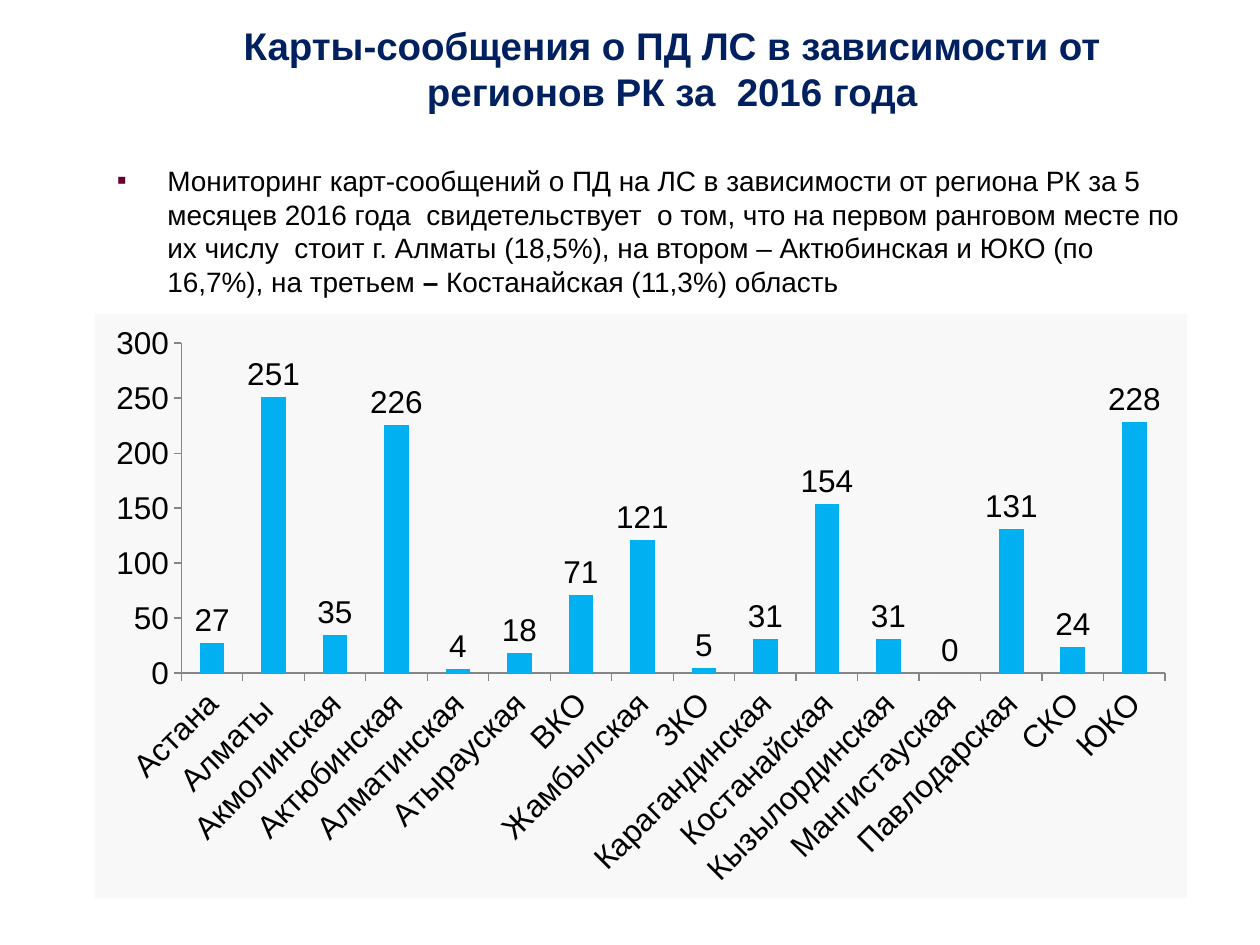
import pptx
import pptx.chart.data
import pptx.dml.color
import pptx.enum.chart
import pptx.enum.text
import pptx.oxml
import pptx.oxml.ns
import pptx.util
from lxml import etree
from pptx.util import Inches

FONT = "Arial"
COLORS = {
    "title": "002060",
    "text": "000000",
    "bullet": "660033",
    "bar": "00B0F0",
    "panel": "F8F8F8",
    "axis": "868686",
}
REPORTS = {
    "Астана": 27, "Алматы ": 251, "Акмолинская": 35, "Актюбинская": 226,
    "Алматинская": 4, "Атырауская": 18, "ВКО": 71, "Жамбылская": 121,
    "ЗКО": 5, "Карагандинская": 31, "Костанайская": 154, "Кызылординская": 31,
    "Мангистауская": 0, "Павлодарская": 131, "СКО": 24, "ЮКО": 228,
}
SUMMARY = [
    ("Мониторинг карт-сообщений о ПД на ЛС в зависимости от региона РК за 5 "
     "месяцев 2016 года  свидетельствует  о том, что на первом ранговом месте по "
     "их числу  стоит г. Алматы (18,5%), на втором – Актюбинская и ЮКО (по "
     "16,7%), на третьем", False),
    (" – ", True),
    ("Костанайская (11,3%) область", False),
]


def rgb(name):
    return pptx.dml.color.RGBColor.from_string(COLORS[name])


def format_font(font, size, color, bold=False):
    values = {"name": FONT, "size": pptx.util.Pt(size), "bold": bold}
    for attribute, value in values.items():
        setattr(font, attribute, value)
    font.color.rgb = rgb(color)


def add_text(slide, box, runs, size, color, anchor):
    frame = slide.shapes.add_textbox(*box).text_frame
    frame.word_wrap = True
    frame.vertical_anchor = anchor
    paragraph = frame.paragraphs[0]
    for text, bold in runs:
        run = paragraph.add_run()
        run.text = text
        format_font(run.font, size, color, bold)
    return paragraph


def add_title(slide, box):
    title = add_text(slide, box,
                     [("Карты-сообщения о ПД ЛС в зависимости от регионов РК за  2016 года", True)],
                     22, "title", pptx.enum.text.MSO_ANCHOR.MIDDLE)
    title.alignment = pptx.enum.text.PP_ALIGN.CENTER


def add_summary(slide, box):
    summary = add_text(slide, box, SUMMARY, 16, "text", pptx.enum.text.MSO_ANCHOR.TOP)
    summary.space_before = pptx.util.Pt(3)
    # Hanging square bullet
    properties = summary._p.get_or_add_pPr()
    properties.set("marL", str(Inches(0.4)))
    properties.set("indent", str(-Inches(0.4)))
    qn = pptx.oxml.ns.qn
    bullet_color = etree.SubElement(properties, qn("a:buClr"))
    etree.SubElement(bullet_color, qn("a:srgbClr"), val=COLORS["bullet"])
    etree.SubElement(properties, qn("a:buFont"), typeface=FONT)
    etree.SubElement(properties, qn("a:buChar"), char="▪")


def add_region_chart(slide, box):
    data = pptx.chart.data.CategoryChartData()
    data.categories = list(REPORTS)
    data.add_series("Series 1", list(REPORTS.values()))
    chart = slide.shapes.add_chart(
        pptx.enum.chart.XL_CHART_TYPE.COLUMN_CLUSTERED, *box, data).chart
    chart.has_legend = False
    chart.has_title = False
    format_font(chart.font, 18, "text")

    # Columns and their labels
    plot = chart.plots[0]
    plot.gap_width = 150
    plot.vary_by_categories = False
    bars = plot.series[0].format.fill
    bars.solid()
    bars.fore_color.rgb = rgb("bar")
    plot.has_data_labels = True
    plot.data_labels.show_value = True
    plot.data_labels.position = pptx.enum.chart.XL_LABEL_POSITION.OUTSIDE_END

    # Axes
    for axis in (chart.category_axis, chart.value_axis):
        axis.has_major_gridlines = False
        axis.major_tick_mark = pptx.enum.chart.XL_TICK_MARK.OUTSIDE
        axis.format.line.color.rgb = rgb("axis")
        format_font(axis.tick_labels.font, 18, "text")
    scale = {"minimum_scale": 0, "maximum_scale": 300, "major_unit": 50}
    for attribute, value in scale.items():
        setattr(chart.value_axis, attribute, value)
    label_body = chart.category_axis._element.find(".//" + pptx.oxml.ns.qn("a:bodyPr"))
    label_body.set("rot", str(-45 * 60000))

    # Panel behind the chart
    panel = pptx.oxml.parse_xml(
        f'<c:spPr {pptx.oxml.ns.nsdecls("c", "a")}><a:solidFill>'
        f'<a:srgbClr val="{COLORS["panel"]}"/></a:solidFill>'
        '<a:ln><a:noFill/></a:ln></c:spPr>')
    chart._chartSpace.find(pptx.oxml.ns.qn("c:chart")).addnext(panel)


def main():
    deck = pptx.Presentation()
    deck.slide_width, deck.slide_height = Inches(10), Inches(7.5)
    slide = deck.slides.add_slide(deck.slide_layouts[6])
    regions = [
        (add_title, (1.17, 0, 8.33, 1.08)),
        (add_summary, (0.83, 1.25, 8.67, 1.24)),
        (add_region_chart, (0.75, 2.49, 8.67, 4.64)),
    ]
    for add_region, box in regions:
        add_region(slide, [Inches(length) for length in box])
    deck.save("out.pptx")


if __name__ == "__main__":
    main()
